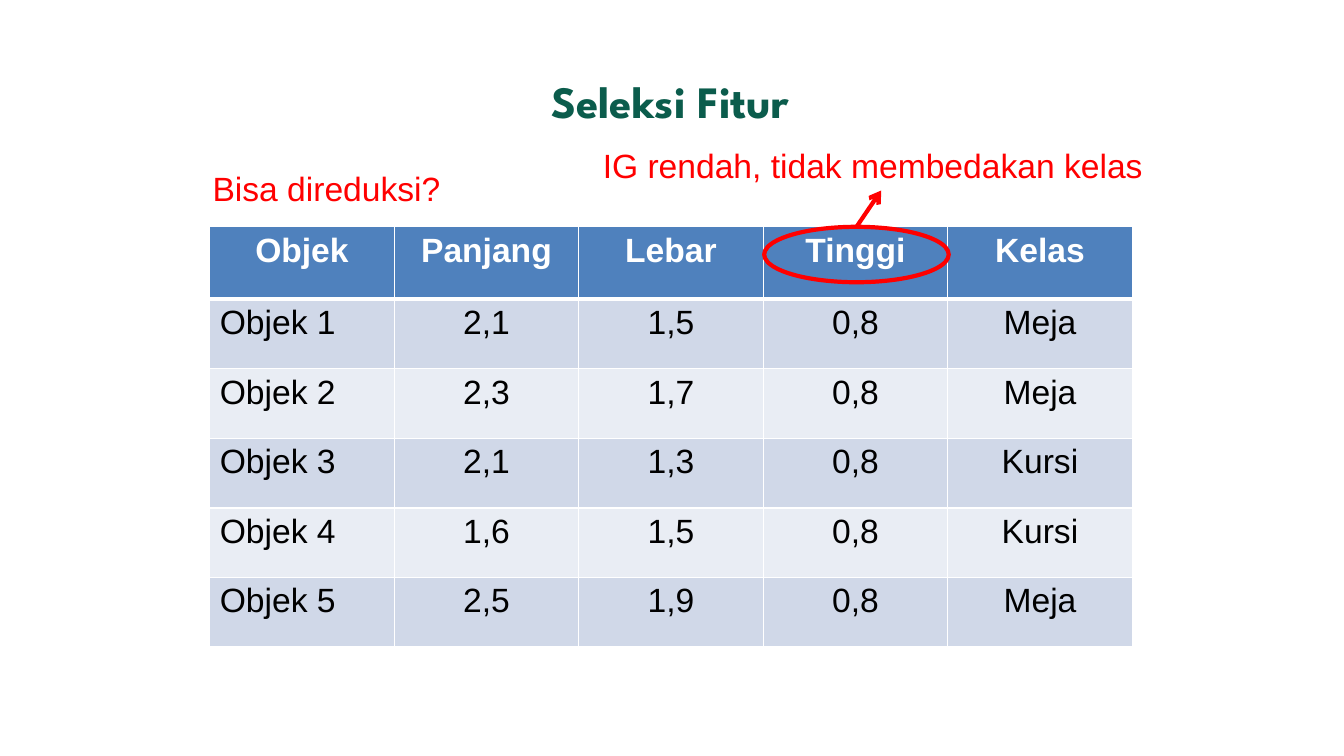
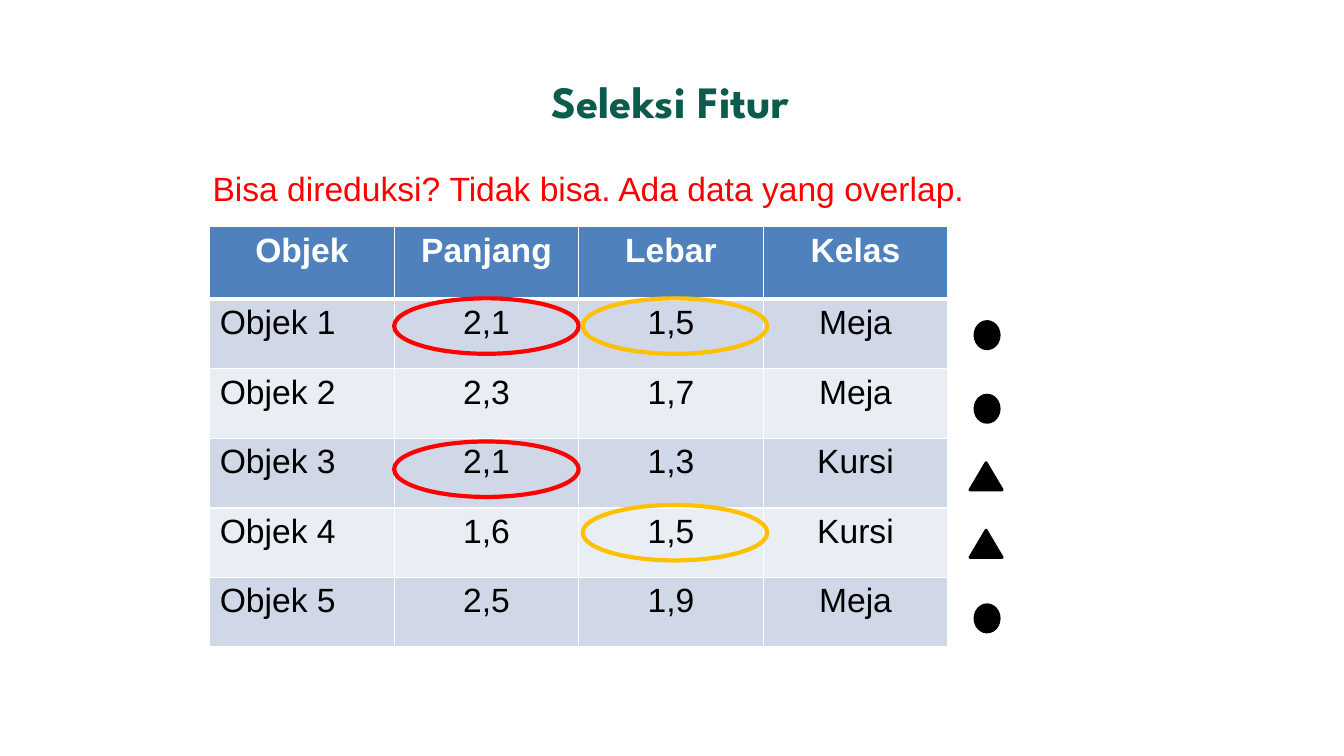
"""Build two slides on feature selection, each with a data table and marked cells."""
from dataclasses import dataclass

from lxml import etree
from pptx import Presentation
from pptx.dml.color import RGBColor
from pptx.enum.shapes import MSO_CONNECTOR, MSO_SHAPE
from pptx.enum.text import MSO_ANCHOR, MSO_AUTO_SIZE, PP_ALIGN
from pptx.oxml.ns import qn
from pptx.slide import Slide
from pptx.util import Inches, Pt

CENTER, LEFT = PP_ALIGN.CENTER, PP_ALIGN.LEFT
MIDDLE = MSO_ANCHOR.MIDDLE
NO_AUTOFIT = MSO_AUTO_SIZE.NONE
ELLIPSE, TRIANGLE = MSO_SHAPE.OVAL, MSO_SHAPE.ISOSCELES_TRIANGLE
STRAIGHT = MSO_CONNECTOR.STRAIGHT
TITLE_ONLY = 5
TOP_SITE = 0

COLORS = {
    "title": "0B5C4C",
    "header": "4F81BD",
    "odd": "D0D8E8",
    "even": "E9EDF4",
    "white": "FFFFFF",
    "black": "000000",
    "red": "FF0000",
    "gold": "FFC000",
}
TITLE_FONT = {"name": "League Spartan", "size": Pt(32), "bold": True}
HEADER_FONT = {"name": "Arial", "size": Pt(24), "bold": True}
BODY_FONT = {"name": "Arial", "size": Pt(24), "bold": False}

TABLE_LEFT, TABLE_TOP = 2.08, 2.25
COLUMN_WIDTH, HEADER_HEIGHT, ROW_HEIGHT = 1.83, 0.72, 0.69
RING_WIDTH, RING_HEIGHT = 1.83, 0.55

OBJECTS = [
    ["Objek", "Panjang", "Lebar", "Tinggi", "Kelas"],
    ["Objek 1", "2,1", "1,5", "0,8", "Meja"],
    ["Objek 2", "2,3", "1,7", "0,8", "Meja"],
    ["Objek 3", "2,1", "1,3", "0,8", "Kursi"],
    ["Objek 4", "1,6", "1,5", "0,8", "Kursi"],
    ["Objek 5", "2,5", "1,9", "0,8", "Meja"],
]
REDUCED_OBJECTS = [row[:3] + row[4:] for row in OBJECTS]


@dataclass(frozen=True)
class Note:
    text: str
    left: float
    top: float
    width: float


@dataclass(frozen=True)
class Ring:
    left: float
    top: float
    color: str


@dataclass(frozen=True)
class ClassMarker:
    shape: MSO_SHAPE
    left: float
    width: float


QUESTION = Note("Bisa direduksi?", 2.01, 1.62, 2.53)
LOW_GAIN = Note("IG rendah, tidak membedakan kelas", 5.88, 1.39, 5.72)
ANSWER = Note("Tidak bisa. Ada data yang overlap.", 4.36, 1.62, 5.39)

HEIGHT_RING = Ring(7.58, 2.25, "red")
OVERLAP_RINGS = [
    Ring(3.91, 2.96, "red"),
    Ring(3.91, 4.38, "red"),
    Ring(5.78, 2.96, "gold"),
    Ring(5.78, 5.01, "gold"),
]

CLASS_MARKERS = {
    "Meja": ClassMarker(ELLIPSE, 9.67, 0.24),
    "Kursi": ClassMarker(TRIANGLE, 9.62, 0.32),
}
MARKER_TOPS = [3.19, 3.92, 4.59, 5.26, 6]
MARKER_HEIGHT = 0.27


def rgb(color: str) -> RGBColor:
    return RGBColor.from_string(COLORS[color])


def write(frame, text: str, style: dict, color: str, align=LEFT) -> None:
    para = frame.paragraphs[0]
    para.alignment = align
    span = para.add_run()
    span.text = text
    for name, value in style.items():
        setattr(span.font, name, value)
    span.font.color.rgb = rgb(color)


def add_page(deck) -> Slide:
    page = deck.slides.add_slide(deck.slide_layouts[TITLE_ONLY])
    title = page.shapes.title
    place = {"left": 3.88, "top": 0.68, "width": 5.54, "height": 0.64}
    for name, value in place.items():
        setattr(title, name, Inches(value))
    frame = title.text_frame
    frame.auto_size = NO_AUTOFIT
    frame.vertical_anchor = MIDDLE
    write(frame, "Seleksi Fitur", TITLE_FONT, "title", CENTER)
    return page


def add_note(page: Slide, note: Note) -> None:
    box = page.shapes.add_textbox(
        Inches(note.left), Inches(note.top), Inches(note.width), Inches(0.5))
    box.text_frame.word_wrap = True
    write(box.text_frame, note.text, BODY_FONT, "red")


def set_borders(cell, top: float, bottom: float) -> None:
    properties = cell._tc.get_or_add_tcPr()
    for tag, points in (("lnL", 1), ("lnR", 1), ("lnT", top), ("lnB", bottom)):
        line = etree.SubElement(properties, qn(f"a:{tag}"), w=str(Pt(points)))
        fill = etree.SubElement(line, qn("a:solidFill"))
        etree.SubElement(fill, qn("a:srgbClr"), val=COLORS["white"])


def add_object_table(page: Slide, rows: list[list[str]]) -> None:
    columns = len(rows[0])
    height = HEADER_HEIGHT + ROW_HEIGHT * (len(rows) - 1)
    table = page.shapes.add_table(
        len(rows), columns, Inches(TABLE_LEFT), Inches(TABLE_TOP),
        Inches(COLUMN_WIDTH * columns), Inches(height)).table
    for column in table.columns:
        column.width = Inches(COLUMN_WIDTH)
    for row_index, row in enumerate(rows):
        header = row_index == 0
        table.rows[row_index].height = Inches(HEADER_HEIGHT if header else ROW_HEIGHT)
        fill = "header" if header else ("even", "odd")[row_index % 2]
        for column_index, text in enumerate(row):
            cell = table.cell(row_index, column_index)
            set_borders(cell, 3 if row_index == 1 else 1, 3 if header else 1)
            cell.fill.solid()
            cell.fill.fore_color.rgb = rgb(fill)
            write(cell.text_frame, text,
                  HEADER_FONT if header else BODY_FONT,
                  "white" if header else "black",
                  CENTER if header or column_index else LEFT)


def add_ring(page: Slide, ring: Ring):
    shape = page.shapes.add_shape(
        ELLIPSE, Inches(ring.left), Inches(ring.top),
        Inches(RING_WIDTH), Inches(RING_HEIGHT))
    shape.shadow.inherit = False
    shape.fill.background()
    shape.line.color.rgb = rgb(ring.color)
    shape.line.width = Pt(3)
    return shape


def add_arrow(page: Slide, ring_shape, end_left: float, end_top: float) -> None:
    arrow = page.shapes.add_connector(
        STRAIGHT, Inches(8.5), Inches(2.25), Inches(end_left), Inches(end_top))
    arrow.begin_connect(ring_shape, TOP_SITE)
    arrow.line.color.rgb = rgb("red")
    arrow.line.width = Pt(3)
    etree.SubElement(arrow.line._get_or_add_ln(), qn("a:tailEnd"), type="arrow")
    etree.SubElement(arrow._element.spPr, qn("a:effectLst"))


def add_class_marker(page: Slide, marker: ClassMarker, top: float) -> None:
    shape = page.shapes.add_shape(
        marker.shape, Inches(marker.left), Inches(top),
        Inches(marker.width), Inches(MARKER_HEIGHT))
    shape.shadow.inherit = False
    shape.fill.solid()
    shape.fill.fore_color.rgb = rgb("black")
    shape.line.color.rgb = rgb("black")
    shape.line.width = Pt(2)


def build_low_gain_page(deck) -> None:
    page = add_page(deck)
    add_object_table(page, OBJECTS)
    add_note(page, LOW_GAIN)
    add_arrow(page, add_ring(page, HEIGHT_RING), 8.74, 1.89)
    add_note(page, QUESTION)


def build_overlap_page(deck) -> None:
    page = add_page(deck)
    add_object_table(page, REDUCED_OBJECTS)
    add_note(page, QUESTION)
    add_note(page, ANSWER)
    for row, top in zip(REDUCED_OBJECTS[1:], MARKER_TOPS):
        add_class_marker(page, CLASS_MARKERS[row[-1]], top)
    for ring in OVERLAP_RINGS:
        add_ring(page, ring)


def main() -> None:
    deck = Presentation()
    deck.slide_width, deck.slide_height = Inches(13.33), Inches(7.5)
    build_low_gain_page(deck)
    build_overlap_page(deck)
    deck.save("out.pptx")


if __name__ == "__main__":
    main()
